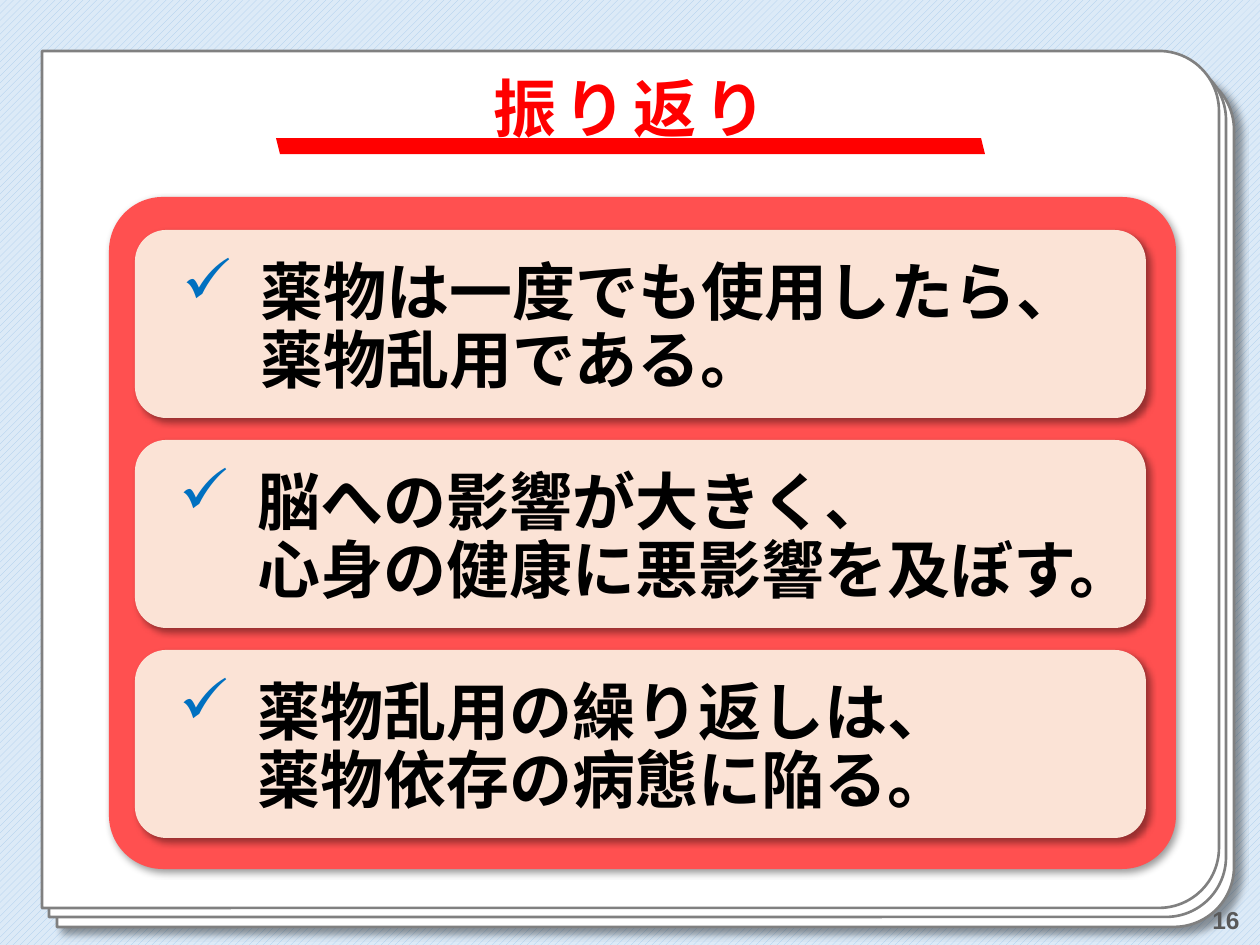
from dataclasses import dataclass

from lxml.etree import SubElement
from pptx import Presentation
from pptx.dml.color import RGBColor as RGB
from pptx.enum.dml import MSO_PATTERN as Pattern
from pptx.enum.shapes import MSO_SHAPE as Shape
from pptx.enum.text import MSO_ANCHOR as Anchor, PP_ALIGN as Align
from pptx.oxml.ns import qn
from pptx.util import Pt

SCALE = 914400 / 126


@dataclass(frozen=True)
class Theme:
    """Colours, font and type sizes of the slide."""
    font: str = "Arial"
    back: str = "DCEAF7"
    hatch: str = "A6CAEC"
    paper: str = "FFFFFF"
    edge: str = "808080"
    red: str = "FF0000"
    panel: str = "FF5050"
    card: str = "FBE3D6"
    tick: str = "0070C0"
    ink: str = "000000"
    page: str = "595959"
    large: int = 36
    small: int = 14


THEME = Theme()
CARDS = [
    ("薬物は一度でも使用したら、\v薬物乱用である。", 103),
    ("脳への影響が大きく、\v心身の健康に悪影響を及ぼす。", 100),
    ("薬物乱用の繰り返しは、\v薬物依存の病態に陥る。", 100),
]


def px(*sizes):
    """Turn pixels into EMU."""
    return [round(size * SCALE) for size in sizes]


def color(code):
    """Make a colour from its hex code."""
    return RGB.from_string(code)


def style(para, size, code):
    """Set the bold font of a paragraph."""
    font = para.font
    font.name, font.size, font.bold = THEME.font, Pt(size), True
    font.color.rgb = color(code)


def shade(shape, dist):
    """Cast a soft shadow to the lower right."""
    effects = shape._element.spPr.find(qn("a:effectLst"))
    outer = SubElement(effects, qn("a:outerShdw"), blurRad=str(Pt(4)),
                       dist=str(Pt(dist)), dir="2700000", algn="tl", rotWithShape="0")
    tone = SubElement(outer, qn("a:srgbClr"), val=THEME.ink)
    SubElement(tone, qn("a:alpha"), val="40000")


def block(slide, kind, box, fill, adjust=(), dist=0):
    """Add a filled shape without outline."""
    shape = slide.shapes.add_shape(kind, *px(*box))
    shape.shadow.inherit = False
    shape.fill.solid()
    shape.fill.fore_color.rgb = color(fill)
    shape.line.fill.background()
    for index, value in enumerate(adjust):
        shape.adjustments[index] = value
    if dist:
        shade(shape, dist)
    return shape


def sheet(slide, left, top, dist=0):
    """Add a paper sheet with round corners on its right."""
    shape = block(slide, Shape.ROUND_2_SAME_RECTANGLE, (left, top, 857, 1177),
                  THEME.paper, (0.07, 0), dist)
    shape.rotation = 90
    shape.line.color.rgb = color(THEME.edge)
    shape.line.width = Pt(1.5)


def heading(slide, text):
    """Place the title and its underline."""
    title = slide.shapes.title
    title.left, title.top, title.width, title.height = px(86, 44, 1088, 136)
    frame = title.text_frame
    frame.text, frame.vertical_anchor = text, Anchor.MIDDLE
    para = frame.paragraphs[0]
    para.alignment, para.line_spacing = Align.CENTER, 0.9
    style(para, THEME.large, THEME.red)
    para.runs[0].font._element.set("spc", "400")


def bullet(para, margin, hang):
    """Give a paragraph a hanging tick."""
    props = para._p.get_or_add_pPr()
    left, indent = px(margin, -hang)
    props.set("marL", str(left))
    props.set("indent", str(indent))
    tone = SubElement(props, qn("a:buClr"))
    SubElement(tone, qn("a:srgbClr"), val=THEME.tick)
    SubElement(props, qn("a:buChar"), char="✓")


def card(slide, top, text, margin):
    """Add a card with one ticked statement."""
    shape = block(slide, Shape.ROUNDED_RECTANGLE, (135, top, 1011, 188), THEME.card, dist=3)
    frame = shape.text_frame
    frame.word_wrap, frame.vertical_anchor = True, Anchor.MIDDLE
    (frame.margin_left, frame.margin_top,
     frame.margin_right, frame.margin_bottom) = px(13, 25, 13, 15)
    para = frame.paragraphs[0]
    para.text = text
    para.alignment, para.line_spacing = Align.LEFT, 0.9
    bullet(para, margin, 78)
    style(para, THEME.large, THEME.ink)


def number(slide, text):
    """Add the page number."""
    frame = slide.shapes.add_textbox(*px(969, 895, 283, 50)).text_frame
    frame.word_wrap, frame.vertical_anchor = True, Anchor.MIDDLE
    para = frame.paragraphs[0]
    para.text, para.alignment = text, Align.RIGHT
    style(para, THEME.small, THEME.page)


def main():
    """Build and save the slide."""
    deck = Presentation()
    deck.slide_width, deck.slide_height = px(1260, 945)
    slide = deck.slides.add_slide(deck.slide_layouts[5])
    fill = slide.background.fill
    fill.patterned()
    fill.pattern = Pattern.WIDE_UPWARD_DIAGONAL
    fill.fore_color.rgb, fill.back_color.rgb = color(THEME.hatch), color(THEME.back)

    for left, top, dist in [(217, -90, 5), (209, -100, 0), (202, -109, 0)]:
        sheet(slide, left, top, dist)
    tree = slide.shapes._spTree
    tree.append(slide.shapes.title._element)
    heading(slide, "振り返り")
    bar = block(slide, Shape.PARALLELOGRAM, (276, 138, 709, 16), THEME.red)
    bar._element.spPr.xfrm.set("flipH", "1")
    block(slide, Shape.ROUNDED_RECTANGLE, (109, 197, 1067, 672), THEME.panel, (0.08,), 3)
    for row, (text, margin) in enumerate(CARDS):
        card(slide, 230 + 210 * row, text, margin)
    number(slide, "16")
    deck.save("out.pptx")


if __name__ == "__main__":
    main()
